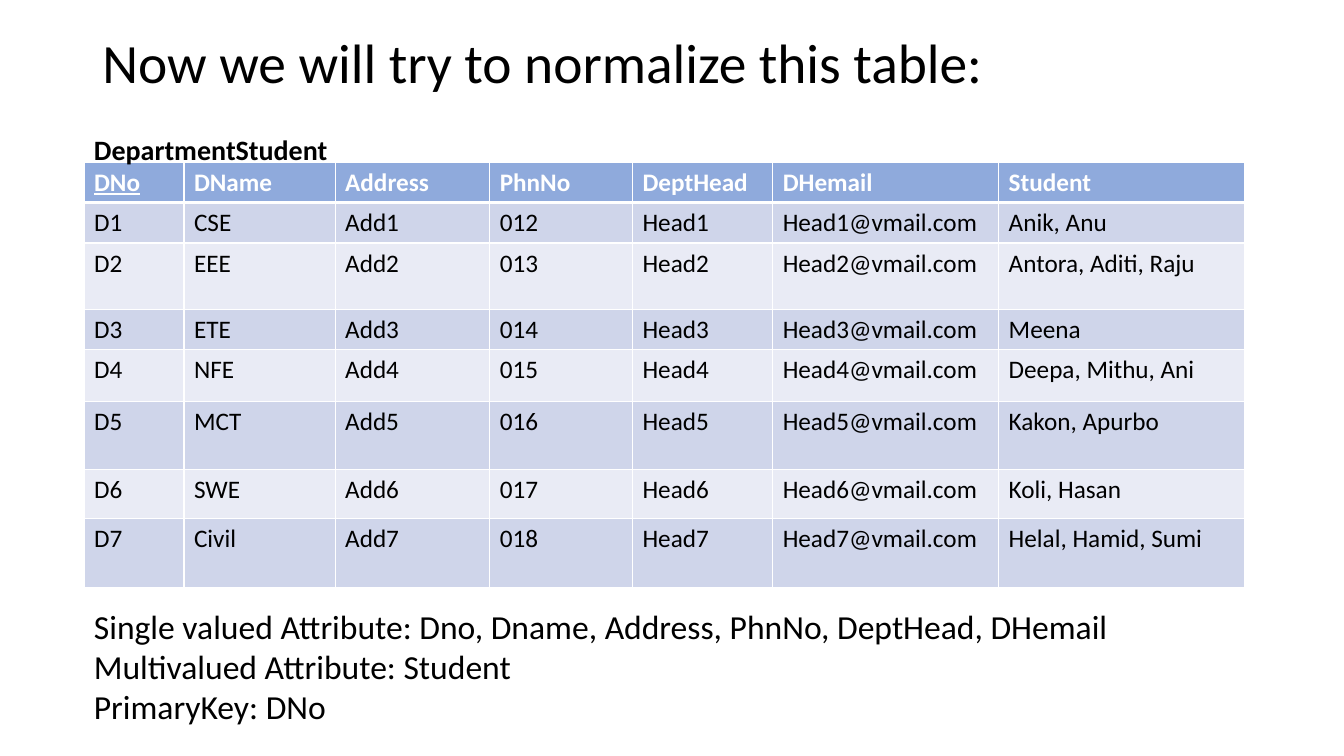
from dataclasses import dataclass

from lxml.etree import SubElement
from pptx import Presentation
from pptx.dml.color import RGBColor
from pptx.enum.text import MSO_ANCHOR
from pptx.oxml.ns import qn
from pptx.util import Inches, Pt


@dataclass(frozen=True)
class Theme:
    font: str = "Calibri"
    text: str = "000000"
    white: str = "FFFFFF"
    header: str = "8FAADC"
    bands: tuple = ("CFD5EA", "E9EBF5")
    title_size: float = 39.6
    summary_size: float = 24
    label_size: float = 20
    cell_size: float = 18
    border: float = 1
    header_border: float = 3


THEME = Theme()
SLIDE_WIDTH, SLIDE_HEIGHT = Inches(13.33), Inches(7.5)
GRID_COLUMNS, GRID_ROWS = 16, 30

TABLE_COLUMNS = (1.19, 1.8, 1.84, 1.7, 1.67, 2.69, 2.93)
TABLE_ROWS = (1.56, 1.56, 2.64, 1.56, 2.04, 2.72, 1.92, 2.76)
HEADINGS = ("DNo", "DName", "Address", "PhnNo", "DeptHead", "DHemail", "Student")
DEPARTMENTS = (
    ("CSE", "Anik, Anu"),
    ("EEE", "Antora, Aditi, Raju"),
    ("ETE", "Meena"),
    ("NFE", "Deepa, Mithu, Ani"),
    ("MCT", "Kakon, Apurbo"),
    ("SWE", "Koli, Hasan"),
    ("Civil", "Helal, Hamid, Sumi"),
)
SUMMARY = (
    "Single valued Attribute: Dno, Dname, Address, PhnNo, DeptHead, DHemail",
    "Multivalued Attribute: Student",
    "PrimaryKey: DNo",
)


def across(columns):
    return round(SLIDE_WIDTH * columns / GRID_COLUMNS)


def down(rows):
    return round(SLIDE_HEIGHT * rows / GRID_ROWS)


def set_attributes(target, values):
    for name, value in values.items():
        setattr(target, name, value)


def style_font(font, size, color=THEME.text, **values):
    set_attributes(font, {"name": THEME.font, "size": Pt(size), **values})
    font.color.rgb = RGBColor.from_string(color)


def add_text(slide, left, top, width, height, lines, size, frame_format=None, spacing=None, bold=False):
    box = slide.shapes.add_textbox(across(left), down(top), across(width), down(height))
    frame = box.text_frame
    set_attributes(frame, {"word_wrap": True, **(frame_format or {})})
    frame.text = "\n".join(lines)
    for paragraph in frame.paragraphs:
        paragraph.line_spacing = spacing
        style_font(paragraph.runs[0].font, size, bold=bold)


def add_borders(cell, bottom_width):
    properties = cell._tc.get_or_add_tcPr()
    widths = {"L": THEME.border, "R": THEME.border, "T": THEME.border, "B": bottom_width}
    for side, width in widths.items():
        line = SubElement(properties, qn(f"a:ln{side}"), w=str(Pt(width)))
        SubElement(SubElement(line, qn("a:solidFill")), qn("a:srgbClr"), val=THEME.white)


def fill_cell(cell, text, color, fill, bottom_width=THEME.border, **font_format):
    cell.text = text
    style_font(cell.text_frame.paragraphs[0].runs[0].font, THEME.cell_size, color, **font_format)
    add_borders(cell, bottom_width)
    cell.fill.solid()
    cell.fill.fore_color.rgb = RGBColor.from_string(fill)


def department_row(number, name, students):
    return (f"D{number}", name, f"Add{number}", f"0{11 + number}",
            f"Head{number}", f"Head{number}@vmail.com", students)


def add_department_table(slide, left, top):
    frame = slide.shapes.add_table(
        len(TABLE_ROWS), len(TABLE_COLUMNS), across(left), down(top),
        across(sum(TABLE_COLUMNS)), down(sum(TABLE_ROWS)))
    table = frame.table
    for column, width in zip(table.columns, TABLE_COLUMNS):
        column.width = across(width)
    for row, height in zip(table.rows, TABLE_ROWS):
        row.height = down(height)
    for index, heading in enumerate(HEADINGS):
        fill_cell(table.cell(0, index), heading, THEME.white, THEME.header,
                  THEME.header_border, bold=True, underline=index == 0)
    for number, (name, students) in enumerate(DEPARTMENTS, start=1):
        fill = THEME.bands[(number - 1) % 2]
        for index, value in enumerate(department_row(number, name, students)):
            fill_cell(table.cell(number, index), value, THEME.text, fill, bold=False)


def main():
    presentation = Presentation()
    set_attributes(presentation, {"slide_width": SLIDE_WIDTH, "slide_height": SLIDE_HEIGHT})
    slide = presentation.slides.add_slide(presentation.slide_layouts[6])
    add_text(slide, 1.1, 1.6, 13.8, 2, ["Now we will try to normalize this table:"],
             THEME.title_size, {"vertical_anchor": MSO_ANCHOR.MIDDLE}, spacing=0.9)
    add_department_table(slide, 1, 6.44)
    add_text(slide, 1, 23.84, 12.4, 5.24, SUMMARY, THEME.summary_size, {"word_wrap": False})
    add_text(slide, 1, 5.08, 3.25, 1.76, ["DepartmentStudent"], THEME.label_size, bold=True)
    presentation.save("out.pptx")


if __name__ == "__main__":
    main()
